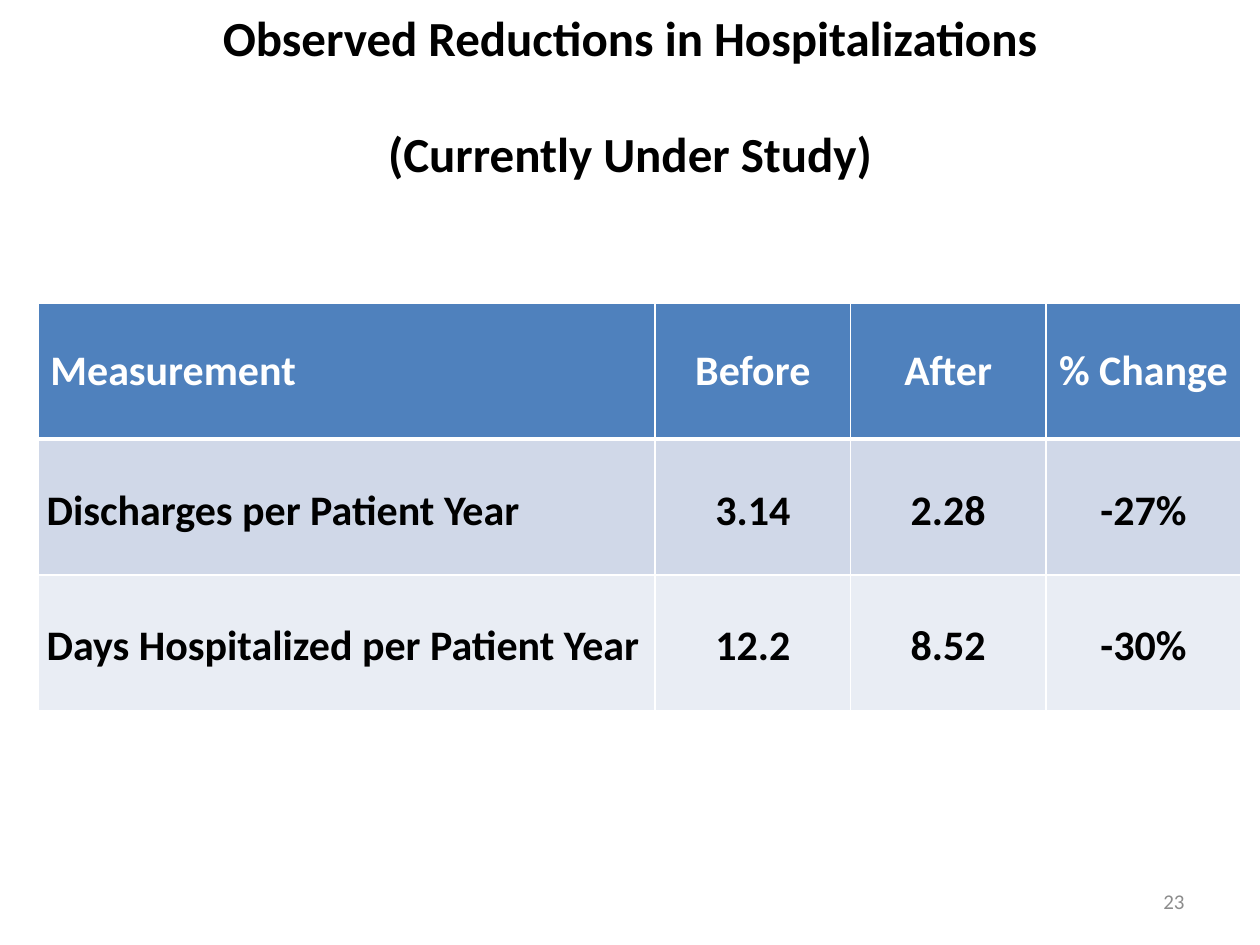
from lxml.etree import SubElement
from pptx import Presentation
from pptx.dml.color import RGBColor
from pptx.enum.text import MSO_ANCHOR, PP_ALIGN
from pptx.oxml.ns import qn
from pptx.util import Inches, Pt

ROWS = [
    ["Measurement", "Before", "After", "% Change"],
    ["Discharges per Patient Year", "3.14", "2.28", "-27%"],
    ["Days Hospitalized per Patient Year", "12.2", "8.52", "-30%"],
]
FILLS = ["4F81BD", "D0D8E8", "E9EDF4"]


def color(code):
    return RGBColor.from_string(code)


class Deck:
    font = "Calibri"

    def __init__(self, wide, high):
        self.prs = Presentation()
        self.prs.slide_width = self.wide = Inches(wide)
        self.prs.slide_height = self.high = Inches(high)
        self.slide = self.prs.slides.add_slide(self.prs.slide_layouts[6])

    def place(self, x, y, w, h):
        return [int(x * self.wide), int(y * self.high),
                int(w * self.wide), int(h * self.high)]

    def style(self, par, size, ink, bold, align):
        par.alignment = align
        for run in par.runs:
            run.font.name = self.font
            run.font.size = Pt(size)
            run.font.bold = bold
            run.font.color.rgb = color(ink)

    def text(self, box, lines, size, ink, bold=False,
             align=PP_ALIGN.CENTER, anchor=MSO_ANCHOR.TOP, gap=0):
        frame = self.slide.shapes.add_textbox(*self.place(*box)).text_frame
        frame.word_wrap = True
        frame.vertical_anchor = anchor
        frame.text = "\n".join(lines)
        for i, par in enumerate(frame.paragraphs):
            self.style(par, size, ink, bold, align)
            par.space_before = Pt(gap if i else 0)

    def edges(self, cell, widths):
        props = cell._tc.get_or_add_tcPr()
        for i, (side, width) in enumerate(zip("LRTB", widths)):
            line = SubElement(props, qn(f"a:ln{side}"), w=str(Pt(width)))
            fill = SubElement(line, qn("a:solidFill"))
            SubElement(fill, qn("a:srgbClr"), val="FFFFFF")
            props.insert(i, line)

    def table(self, box, rows, shares, fills, size):
        place = self.place(*box)
        grid = self.slide.shapes.add_table(len(rows), len(shares), *place).table
        for col, share in zip(grid.columns, shares):
            col.width = int(place[2] * share / sum(shares))
        for r, row in enumerate(rows):
            for c, word in enumerate(row):
                cell = grid.cell(r, c)
                cell.text = word
                cell.vertical_anchor = MSO_ANCHOR.MIDDLE
                cell.fill.solid()
                cell.fill.fore_color.rgb = color(fills[r])
                par = cell.text_frame.paragraphs[0]
                self.style(par, size, "000000" if r else "FFFFFF", True,
                           PP_ALIGN.CENTER if c else PP_ALIGN.LEFT)
                if r:
                    par.line_spacing = 1.15
                    cell.margin_left = cell.margin_right = Inches(0.07)
                    cell.margin_top = cell.margin_bottom = 0
                self.edges(cell, [1, 1, 3 if r == 1 else 1, 1 if r else 3])


def main():
    deck = Deck(10, 7.5)
    deck.text((0.717, 0.927, 0.233, 0.053), ["23"], 12, "8C8C8C",
              align=PP_ALIGN.RIGHT, anchor=MSO_ANCHOR.MIDDLE)
    deck.text((0, 0.001, 1, 0.201),
              ["Observed Reductions in Hospitalizations",
               "(Currently Under Study)"],
              28, "000000", bold=True, gap=33)
    deck.table((0.03, 0.321, 0.955, 0.431), ROWS, [4.9, 1.55, 1.55, 1.55],
               FILLS, 24)
    deck.prs.save("out.pptx")


if __name__ == "__main__":
    main()
